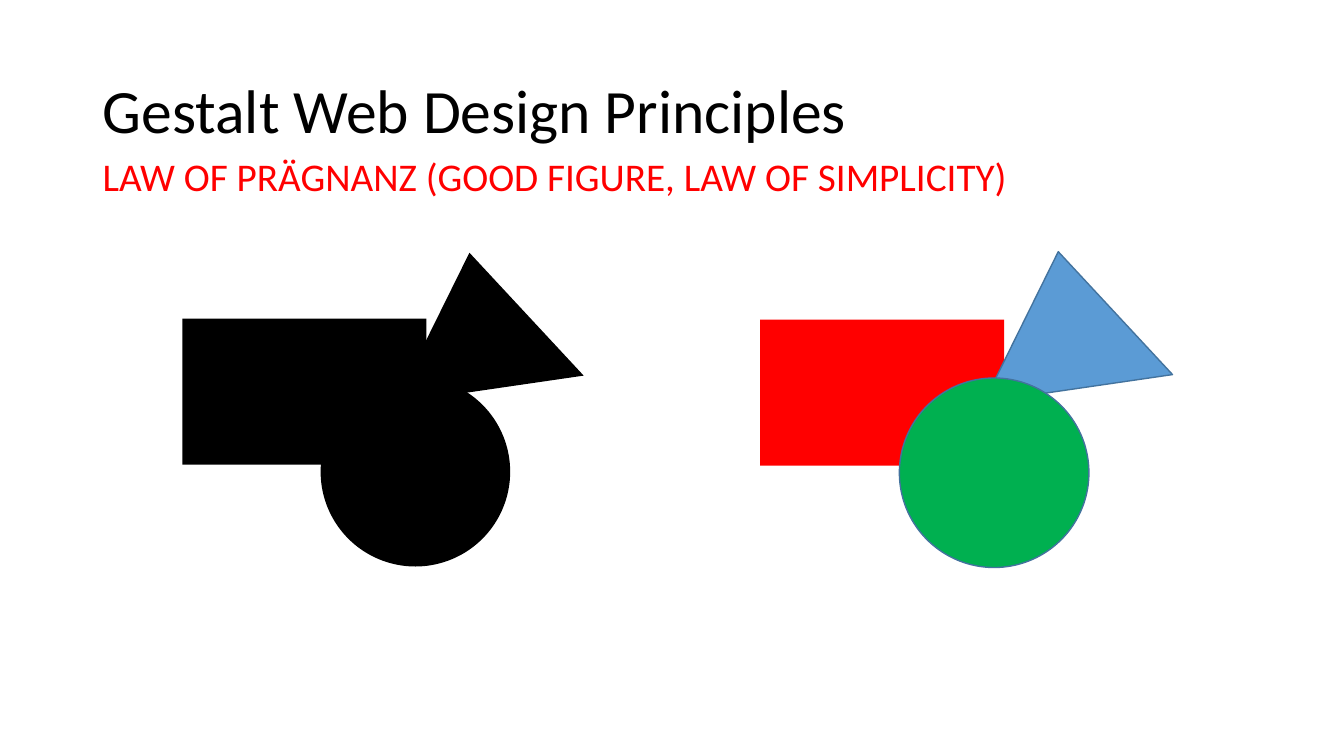
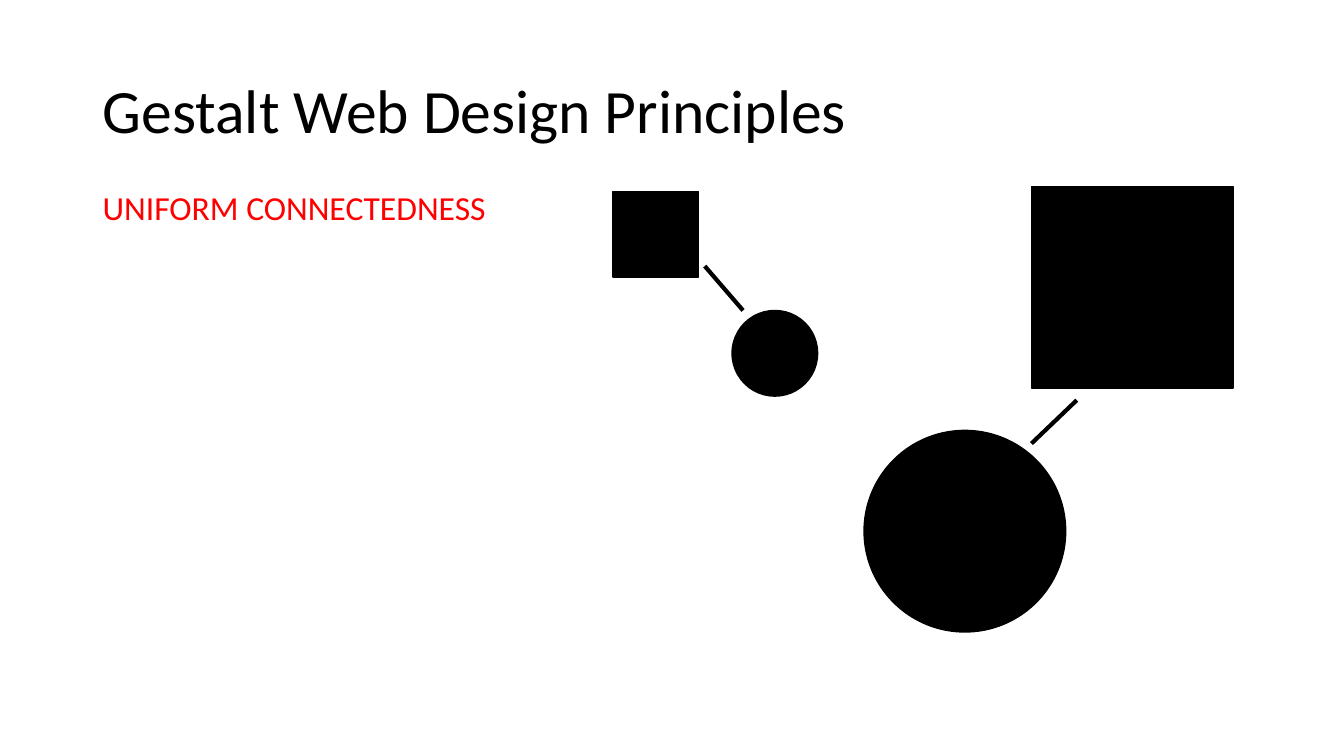
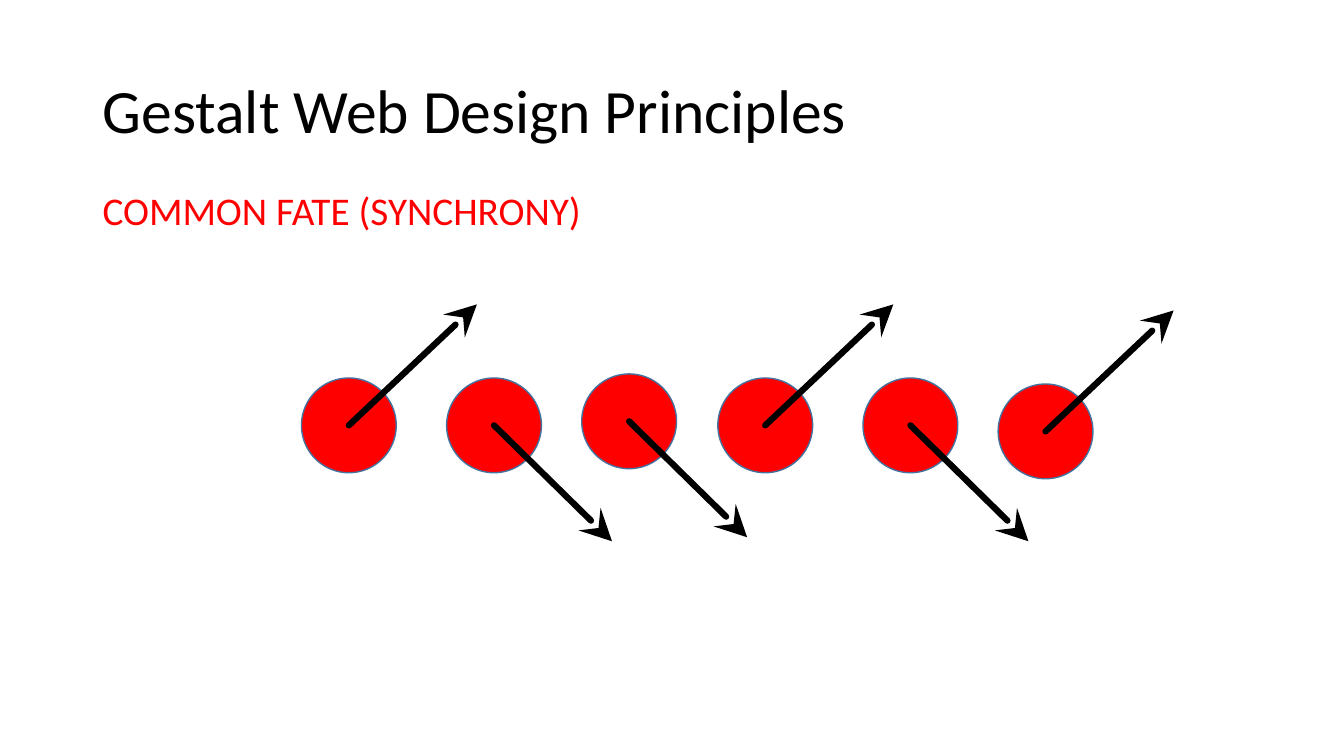
from lxml.etree import SubElement
from pptx import Presentation
from pptx.dml.color import RGBColor
from pptx.enum.shapes import MSO_CONNECTOR, MSO_SHAPE
from pptx.enum.text import MSO_ANCHOR
from pptx.oxml.ns import qn
from pptx.util import Inches, Pt

COLORS = {
    "black": "000000",
    "red": "FF0000",
    "blue": "5B9BD5",
    "green": "00B050",
    "outline": "43739E",
}
TITLE = "Gestalt Web Design Principles"
TITLE_BOX = (0.92, 0.4, 11.5, 1.45)
PRINCIPLES = [
    ("LAW OF PRÄGNANZ (GOOD FIGURE, LAW OF SIMPLICITY)", 28, (0.92, 1.51, 11.93, 4.76)),
    ("UNIFORM CONNECTEDNESS", 24, (0.92, 1.85, 7.47, 4.61)),
    ("COMMON FATE (SYNCHRONY)", 28, (0.92, 1.85, 7.47, 4.61)),
]


def add_figure(shapes, kind, box, fill, outline=None, rotation=0):
    figure = shapes.add_shape(kind, *map(Inches, box))
    figure.shadow.inherit = False
    figure.rotation = rotation
    figure.fill.solid()
    figure.fill.fore_color.rgb = RGBColor.from_string(COLORS[fill])
    if outline:
        figure.line.color.rgb = RGBColor.from_string(COLORS[outline])
        figure.line.width = Pt(1)
    else:
        figure.line.fill.background()


def add_link(shapes, start, end, width, arrow=False):
    """Draw a black line; an arrow gets round ends and a large stealth head."""
    link = shapes.add_connector(MSO_CONNECTOR.STRAIGHT, *map(Inches, (*start, *end)))
    link.line.color.rgb = RGBColor.from_string(COLORS["black"])
    link.line.width = Pt(width)
    if arrow:
        outline = link.line._get_or_add_ln()
        outline.set("cap", "rnd")
        SubElement(outline, qn("a:tailEnd"), type="stealth", w="lg", len="lg")
    SubElement(link._element.spPr, qn("a:effectLst"))


presentation = Presentation()
presentation.slide_width = Inches(13.33)
presentation.slide_height = Inches(7.5)

# Title and principle on every slide
canvases = []
for principle, principle_size, principle_box in PRINCIPLES:
    shapes = presentation.slides.add_slide(presentation.slide_layouts[6]).shapes
    canvases.append(shapes)
    for text, size, color, box, anchor in [
        (TITLE, 44, "black", TITLE_BOX, MSO_ANCHOR.MIDDLE),
        (principle, principle_size, "red", principle_box, MSO_ANCHOR.TOP),
    ]:
        frame = shapes.add_textbox(*map(Inches, box)).text_frame
        frame.word_wrap = True
        frame.vertical_anchor = anchor
        paragraph = frame.paragraphs[0]
        paragraph.text = text
        paragraph.line_spacing = 0.9
        for attribute, value in {"name": "Calibri", "size": Pt(size)}.items():
            setattr(paragraph.font, attribute, value)
        paragraph.font.color.rgb = RGBColor.from_string(COLORS[color])

pragnanz, connectedness, common_fate = canvases

# Simplicity: the same figure in separate colours and as one silhouette
for rectangle, triangle, circle, fills, outline in [
    ((7.54, 3.17), (9.65, 2.49), (8.92, 3.75), ("red", "blue", "green"), "outline"),
    ((1.81, 3.16), (3.81, 2.5), (3.18, 3.74), ("black",) * 3, None),
]:
    composition = pragnanz.add_group_shape().shapes
    add_figure(composition, MSO_SHAPE.RECTANGLE, (*rectangle, 2.42, 1.45), fills[0])
    add_figure(composition, MSO_SHAPE.ISOSCELES_TRIANGLE, (*triangle, 1.89, 1.37),
               fills[1], outline, 351.7)
    add_figure(composition, MSO_SHAPE.OVAL, (*circle, 1.88, 1.88), fills[2], outline)

# Connectedness: a small and a large linked pair
for size, circle, square, start, end in [
    (0.85, (7.26, 3.08), (6.08, 1.9), (6.99, 2.64), (7.37, 3.08)),
    (2, (8.57, 4.27), (10.23, 1.85), (10.68, 3.97), (10.23, 4.4)),
]:
    add_figure(connectedness, MSO_SHAPE.OVAL, (*circle, size, size), "black", "black")
    add_figure(connectedness, MSO_SHAPE.RECTANGLE, (*square, size, size), "black", "black")
    add_link(connectedness, start, end, 3)

# Common fate: each ball moves up or down from its centre
BALL = 0.94
MOVES = {"up": (1.27, -1.2), "down": (1.17, 1.15)}
for left, top, direction in [
    (2.99, 3.75, "up"),
    (4.43, 3.75, "down"),
    (5.77, 3.71, "down"),
    (7.12, 3.75, "up"),
    (8.56, 3.75, "down"),
    (9.9, 3.81, "up"),
]:
    center_x, center_y = left + BALL / 2, top + BALL / 2
    move_x, move_y = MOVES[direction]
    add_figure(common_fate, MSO_SHAPE.OVAL, (left, top, BALL, BALL), "red", "outline")
    add_link(common_fate, (center_x, center_y), (center_x + move_x, center_y + move_y),
             4.5, arrow=True)

presentation.save("out.pptx")
